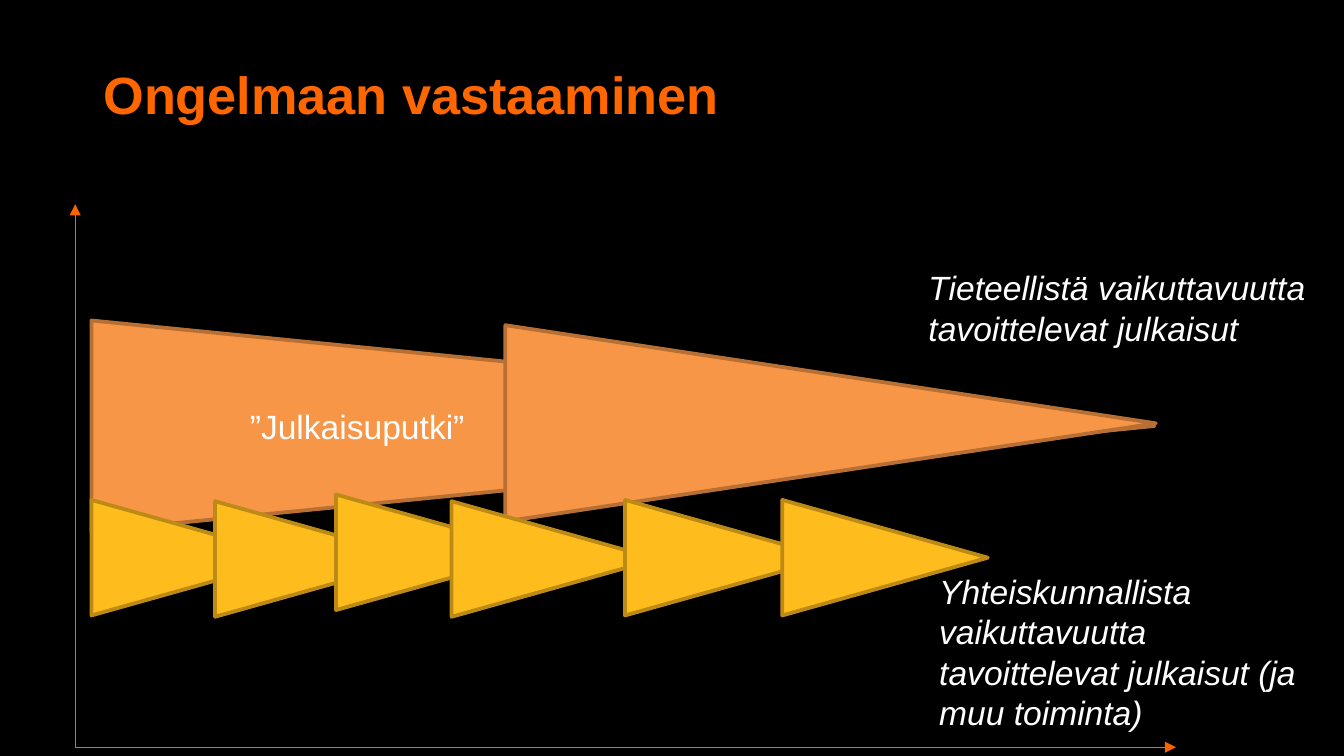
from dataclasses import dataclass

from lxml.etree import SubElement
from pptx import Presentation
from pptx.dml.color import RGBColor as Rgb
from pptx.enum.shapes import MSO_CONNECTOR as Conn, MSO_SHAPE as Shape
from pptx.enum.text import MSO_ANCHOR as Anchor, MSO_AUTO_SIZE as Fit, PP_ALIGN as Align
from pptx.oxml.ns import qn
from pptx.util import Inches, Pt


@dataclass(frozen=True)
class Theme:
    font: str = "Arial"
    back: str = "000000"
    text: str = "FFFFFF"
    title: str = "FF6600"
    axis: str = "F96400"
    science: tuple = ("F79646", "B76F34")
    public: tuple = ("FFBC1D", "BD8B15")
    head: int = 28
    body: int = 18


THEME = Theme()


def color(code):
    return Rgb.from_string(code)


def write(frame, text, size=THEME.body, fill=THEME.text, bold=False,
          italic=False, align=Align.LEFT, anchor=Anchor.TOP):
    frame.word_wrap = True
    frame.vertical_anchor = anchor
    para = frame.paragraphs[0]
    para.alignment = align
    run = para.add_run()
    run.text = text
    font = run.font
    font.name, font.size = THEME.font, Pt(size)
    font.bold, font.italic = bold, italic
    font.color.rgb = color(fill)


def add_title(slide, text):
    title = slide.shapes.title
    title.left, title.top = Inches(0.67), Inches(0.23)
    title.width, title.height = Inches(7.95), Inches(0.94)
    write(title.text_frame, text, size=THEME.head, fill=THEME.title,
          bold=True, anchor=Anchor.MIDDLE)


def add_wedge(slide, left, mid, base, length, colors):
    """Triangle pointing right: left edge, middle height, base and length."""
    wedge = slide.shapes.add_shape(
        Shape.ISOSCELES_TRIANGLE,
        Inches(left + (length - base) / 2), Inches(mid - length / 2),
        Inches(base), Inches(length))
    wedge.rotation = 90
    wedge.shadow.inherit = False
    fill, edge = colors
    wedge.fill.solid()
    wedge.fill.fore_color.rgb = color(fill)
    wedge.line.color.rgb = color(edge)
    wedge.line.width = Pt(2)
    return wedge


def add_axis(slide, start, end):
    points = [Inches(value) for value in (*start, *end)]
    axis = slide.shapes.add_connector(Conn.STRAIGHT, *points)
    axis.line.color.rgb = color(THEME.axis)
    axis.line.width = Pt(0.75)
    SubElement(axis.line._get_or_add_ln(), qn("a:tailEnd"), type="triangle")
    SubElement(axis._element.spPr, qn("a:effectLst"))


def add_label(slide, text, left, top, width, height):
    box = slide.shapes.add_textbox(*map(Inches, (left, top, width, height)))
    write(box.text_frame, text, italic=True)
    box.text_frame.auto_size = Fit.SHAPE_TO_FIT_TEXT


def main():
    # Widescreen page, 16:9
    deck = Presentation()
    deck.slide_width = Inches(10)
    deck.slide_height = Inches(10) * 9 // 16
    slide = deck.slides.add_slide(deck.slide_layouts[5])
    slide.background.fill.solid()
    slide.background.fill.fore_color.rgb = color(THEME.back)
    add_title(slide, "Ongelmaan vastaaminen")

    # Scientific publications; the text is turned back to level
    pipe = add_wedge(slide, 0.68, 3.17, 1.57, 7.91, THEME.science)
    write(pipe.text_frame, "”Julkaisuputki”", align=Align.CENTER,
          anchor=Anchor.MIDDLE)
    pipe.text_frame._txBody.bodyPr.set("vert", "vert270")
    add_wedge(slide, 3.76, 3.15, 1.46, 4.84, THEME.science)

    # Axes
    origin = (0.56, 5.56)
    for end in ((0.56, 1.52), (8.75, 5.56)):
        add_axis(slide, origin, end)

    # Publications for society
    spots = ((0.68, 4.15), (1.6, 4.16), (2.5, 4.11),
             (3.36, 4.16), (4.65, 4.15), (5.82, 4.15))
    for left, mid in spots:
        add_wedge(slide, left, mid, 0.86, 1.53, THEME.public)

    # Labels
    add_label(slide, "Tieteellistä vaikuttavuutta tavoittelevat julkaisut",
              6.81, 1.94, 3.15, 0.71)
    add_label(slide, "Yhteiskunnallista vaikuttavuutta tavoittelevat julkaisut "
              "(ja muu toiminta)", 6.89, 4.2, 3.07, 1.31)

    deck.save("out.pptx")


if __name__ == "__main__":
    main()
